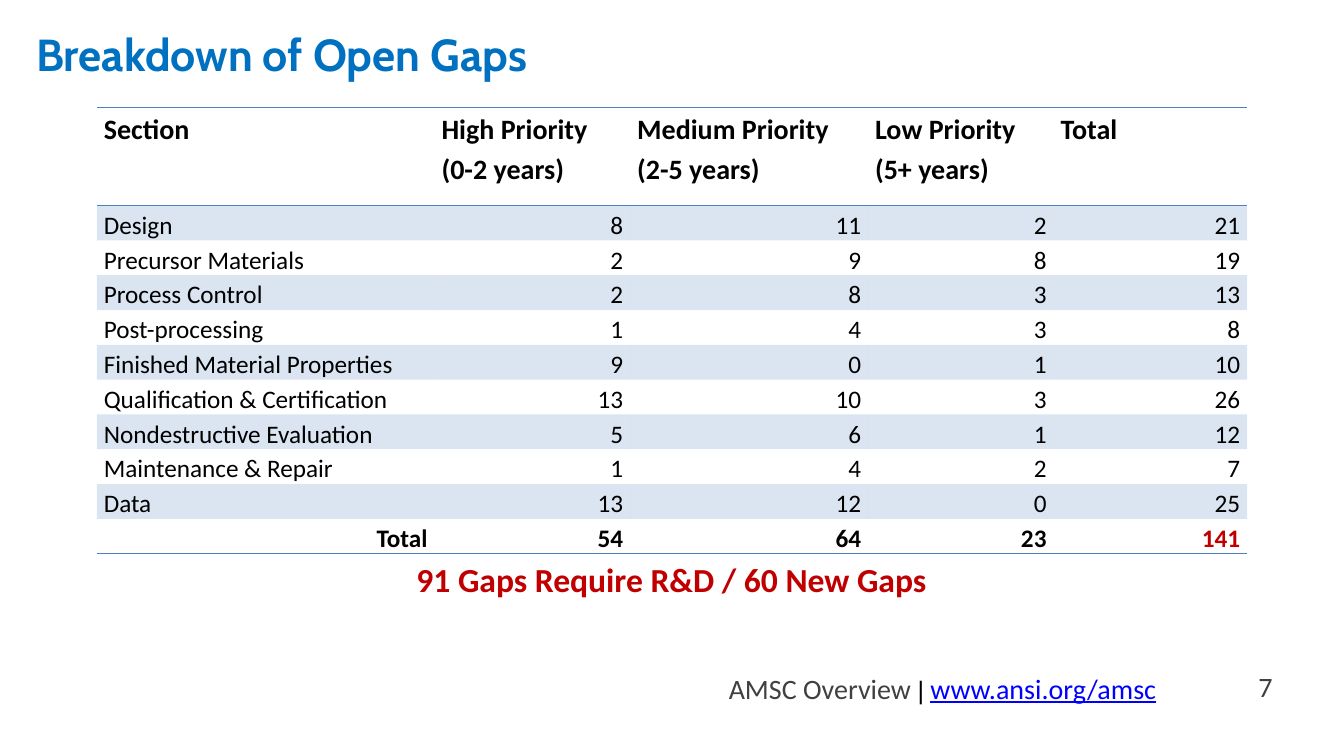
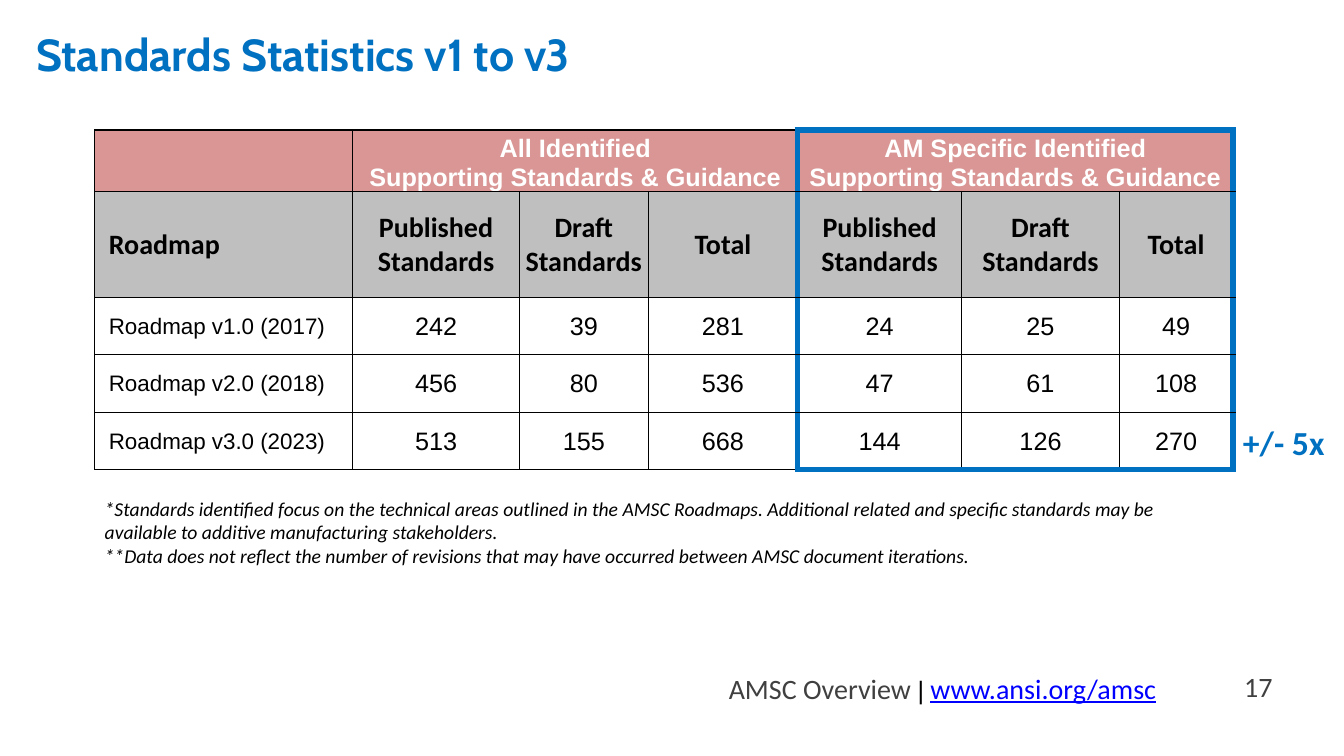
from lxml import etree
from pptx import Presentation
from pptx.dml.color import RGBColor
from pptx.enum.text import MSO_ANCHOR as ANCHOR, PP_ALIGN as ALIGN
from pptx.oxml.ns import qn
from pptx.util import Inches, Pt

BLUE = RGBColor(0x00, 0x70, 0xC0)
STEEL = RGBColor(0x4F, 0x81, 0xBD)
RED = RGBColor(0xC0, 0x00, 0x00)
ROSE = RGBColor(0xD9, 0x96, 0x94)
SILVER = RGBColor(0xBF, 0xBF, 0xBF)
GRAY = RGBColor(0x40, 0x40, 0x40)
LINK = RGBColor(0x00, 0x00, 0xFF)
BLACK = RGBColor(0x00, 0x00, 0x00)
WHITE = RGBColor(0xFF, 0xFF, 0xFF)

PLAIN_TABLE = "{2D5ABB26-0587-4C30-8999-92F81FD0307C}"


def put_text(tf, text, align=ALIGN.LEFT, spacing=None, **fmt):
    """Fill a frame; text is a string or a list of (text, format) runs."""
    runs = [(text, {})] if isinstance(text, str) else text
    p = tf.paragraphs[0]
    for content, own in runs:
        f = {"size": 18, "font": "Calibri", "color": BLACK, **fmt, **own}
        for i, line in enumerate(content.split("\n")):
            if i:
                p = tf.add_paragraph()
            p.alignment = align
            if spacing:
                p.line_spacing = spacing
            r = p.add_run()
            r.text = line
            r.font.name, r.font.size = f["font"], Pt(f["size"])
            r.font.color.rgb = f["color"]
            r.font.bold = f.get("bold", False)
            r.font.italic = f.get("italic", False)
            r.font.underline = f.get("underline", False)


def set_fill(cell, color=None, alpha=None):
    if color is None:
        cell.fill.background()
        return
    cell.fill.solid()
    cell.fill.fore_color.rgb = color
    if alpha:
        clr = cell._tc.tcPr.find(".//" + qn("a:srgbClr"))
        etree.SubElement(clr, qn("a:alpha")).set("val", str(alpha * 1000))


def set_borders(cell, **sides):
    """Draw sides L, R, T, B, each given as (color, points)."""
    tc_pr = cell._tc.get_or_add_tcPr()
    ordered = [side for side in "LRTB" if side in sides]
    for i, side in enumerate(ordered):
        color, width = sides[side]
        ln = etree.Element(qn("a:ln" + side), w=str(Pt(width)))
        fill = etree.SubElement(ln, qn("a:solidFill"))
        etree.SubElement(fill, qn("a:srgbClr"), val=str(color))
        tc_pr.insert(i, ln)


class Deck:
    def __init__(self):
        self.prs = Presentation()
        self.prs.slide_width = Inches(13.33)
        self.prs.slide_height = Inches(7.5)
        self.s = None

    def slide(self, title, number):
        self.s = self.prs.slides.add_slide(self.prs.slide_layouts[6])
        self.text(0.26, 0.01, 10.84, 1.04, title, anchor=ANCHOR.MIDDLE,
                  size=32, font="Cabin", color=BLUE, bold=True)
        # Footer and page number
        self.text(7.13, 6.61, 4.87, 0.44, [
            ("AMSC Overview ", {}),
            ("|", {"size": 18, "font": "Arial", "color": BLACK}),
            (" ", {}),
            ("www.ansi.org/amsc", {"color": LINK, "underline": True}),
        ], size=20, color=GRAY)
        self.text(12.12, 6.61, 0.6, 0.4, str(number), anchor=ANCHOR.MIDDLE,
                  align=ALIGN.RIGHT, size=20, color=GRAY)

    def text(self, x, y, w, h, text, anchor=ANCHOR.TOP, **fmt):
        sp = self.s.shapes.add_textbox(Inches(x), Inches(y), Inches(w), Inches(h))
        tf = sp.text_frame
        tf.word_wrap = True
        tf.vertical_anchor = anchor
        put_text(tf, text, **fmt)

    def table(self, x, y, cols, rows):
        frame = self.s.shapes.add_table(
            len(rows), len(cols), Inches(x), Inches(y),
            Inches(sum(cols)), Inches(sum(rows)))
        tbl = frame.table
        tbl.first_row = tbl.horz_banding = False
        tbl._tbl.tblPr.find(qn("a:tableStyleId")).text = PLAIN_TABLE
        for col, width in zip(tbl.columns, cols):
            col.width = Inches(width)
        for row, height in zip(tbl.rows, rows):
            row.height = Inches(height)
        return tbl

    def cell(self, cell, text, margins, anchor=ANCHOR.TOP, fill=None,
             alpha=None, **fmt):
        left, top, right, bottom = (Inches(m) for m in margins)
        cell.margin_left, cell.margin_top = left, top
        cell.margin_right, cell.margin_bottom = right, bottom
        cell.vertical_anchor = anchor
        set_fill(cell, fill, alpha)
        if text:
            put_text(cell.text_frame, text, **fmt)


def open_gaps(deck):
    deck.slide("Breakdown of Open Gaps", 7)
    header = ["Section", "High Priority\n(0-2 years)",
              "Medium Priority\n(2-5 years)", "Low Priority\n(5+ years)", "Total"]
    gaps = [
        ("Design", 8, 11, 2),
        ("Precursor Materials", 2, 9, 8),
        ("Process Control", 2, 8, 3),
        ("Post-processing", 1, 4, 3),
        ("Finished Material Properties", 9, 0, 1),
        ("Qualification & Certification", 13, 10, 3),
        ("Nondestructive Evaluation", 5, 6, 1),
        ("Maintenance & Repair", 1, 4, 2),
        ("Data", 13, 12, 0),
    ]
    # Totals by column, then by row
    gaps.append(("Total", *(sum(col) for col in list(zip(*gaps))[1:])))
    rows = [header] + [[*row, sum(row[1:])] for row in gaps]
    last = len(rows) - 1
    tbl = deck.table(0.96, 1.07, [3.35, 1.94, 2.36, 1.84, 1.92],
                     [0.97] + [0.32] * last)
    rule = (STEEL, 1)
    for i, row in enumerate(rows):
        for j, value in enumerate(row):
            cell = tbl.cell(i, j)
            right = i == last or (i > 0 and j > 0)
            deck.cell(cell, str(value), (0.07, 0, 0.07, 0),
                      fill=STEEL if i % 2 else None, alpha=20,
                      align=ALIGN.RIGHT if right else ALIGN.LEFT, spacing=1.15,
                      size=18 if i else 20, bold=i in (0, last),
                      color=RED if (i, j) == (last, 4) else BLACK)
            if i == 0:
                set_borders(cell, T=rule, B=rule)
            elif i == last:
                set_borders(cell, B=rule)
    deck.text(0.95, 5.5, 11.42, 0.5, "91 Gaps Require R&D / 60 New Gaps",
              align=ALIGN.CENTER, size=24, color=RED, bold=True)


def standards(deck):
    deck.slide("Standards Statistics v1 to v3", 17)
    scope = "Identified\nSupporting Standards & Guidance"
    rows = [
        ["", "All " + scope, "", "", "AM Specific " + scope, "", ""],
        ["Roadmap"] + ["Published Standards", "Draft Standards", "Total"] * 2,
        ["Roadmap v1.0 (2017)", 242, 39, 281, 24, 25, 49],
        ["Roadmap v2.0 (2018)", 456, 80, 536, 47, 61, 108],
        ["Roadmap v3.0 (2023)", 513, 155, 668, 144, 126, 270],
    ]
    tbl = deck.table(0.94, 1.29, [2.56, 1.65, 1.28, 1.48, 1.63, 1.56, 1.13],
                     [0.47, 1.05] + [0.57] * 3)
    for first in (1, 4):
        tbl.cell(0, first).merge(tbl.cell(0, first + 2))

    thin, thick = (BLACK, 1), (BLUE, 4.5)
    styles = [
        {"fill": ROSE, "font": "Arial", "color": WHITE, "bold": True},
        {"fill": SILVER, "size": 20, "bold": True},
        {"font": "Arial"},
    ]
    for i, row in enumerate(rows):
        for j, value in enumerate(row):
            cell = tbl.cell(i, j)
            style = dict(styles[min(i, 2)])
            if i > 1 and j == 0:
                style["size"] = 16
            deck.cell(cell, str(value), (0.01 if j else 0.14, 0.01, 0.01, 0),
                      anchor=ANCHOR.MIDDLE if i else ANCHOR.BOTTOM,
                      align=ALIGN.CENTER if j else ALIGN.LEFT, **style)
            # The AM specific columns stand in a thick frame
            span = cell.span_width if cell.is_merge_origin else 1
            edges = {"L": j, "R": j + span}
            sides = {side: thick if x in (4, 7) else thin
                     for side, x in edges.items()
                     if i or x in (0, 1, 4, 7)}
            sides["T"] = thick if i == 0 and j > 3 else thin
            sides["B"] = thick if i == len(rows) - 1 and j > 3 else thin
            set_borders(cell, **sides)

    deck.text(0.94, 4.88, 11.29, 0.81,
              "*Standards identified focus on the technical areas outlined in the "
              "AMSC Roadmaps. Additional related and specific standards may be "
              "available to additive manufacturing stakeholders.\n"
              "**Data does not reflect the number of revisions that may have "
              "occurred between AMSC document iterations.", size=14, italic=True)
    deck.text(12.23, 4.14, 1.1, 0.5, "+/- 5x", size=24, color=BLUE, bold=True)


def main():
    deck = Deck()
    open_gaps(deck)
    standards(deck)
    deck.prs.save("out.pptx")


if __name__ == "__main__":
    main()
